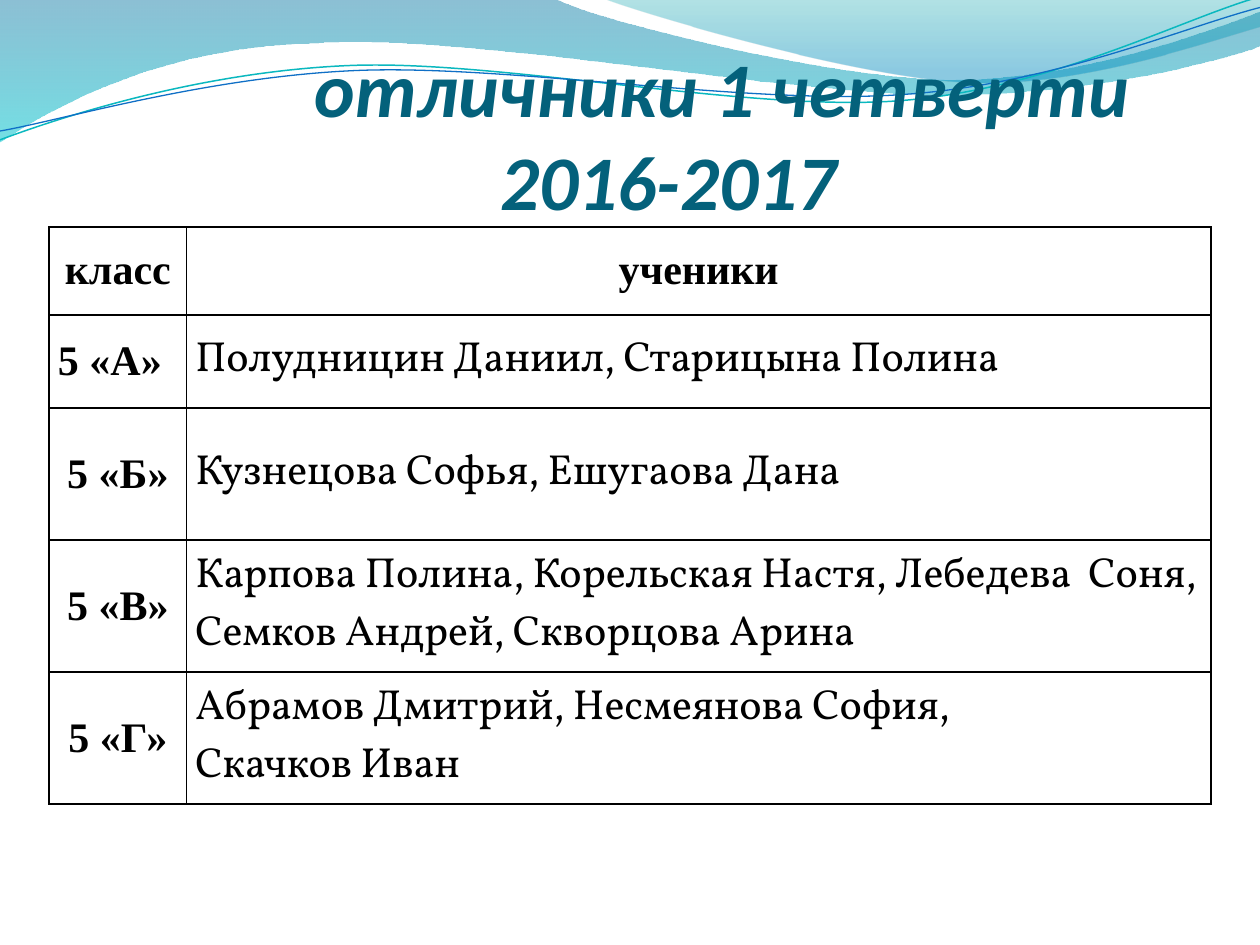
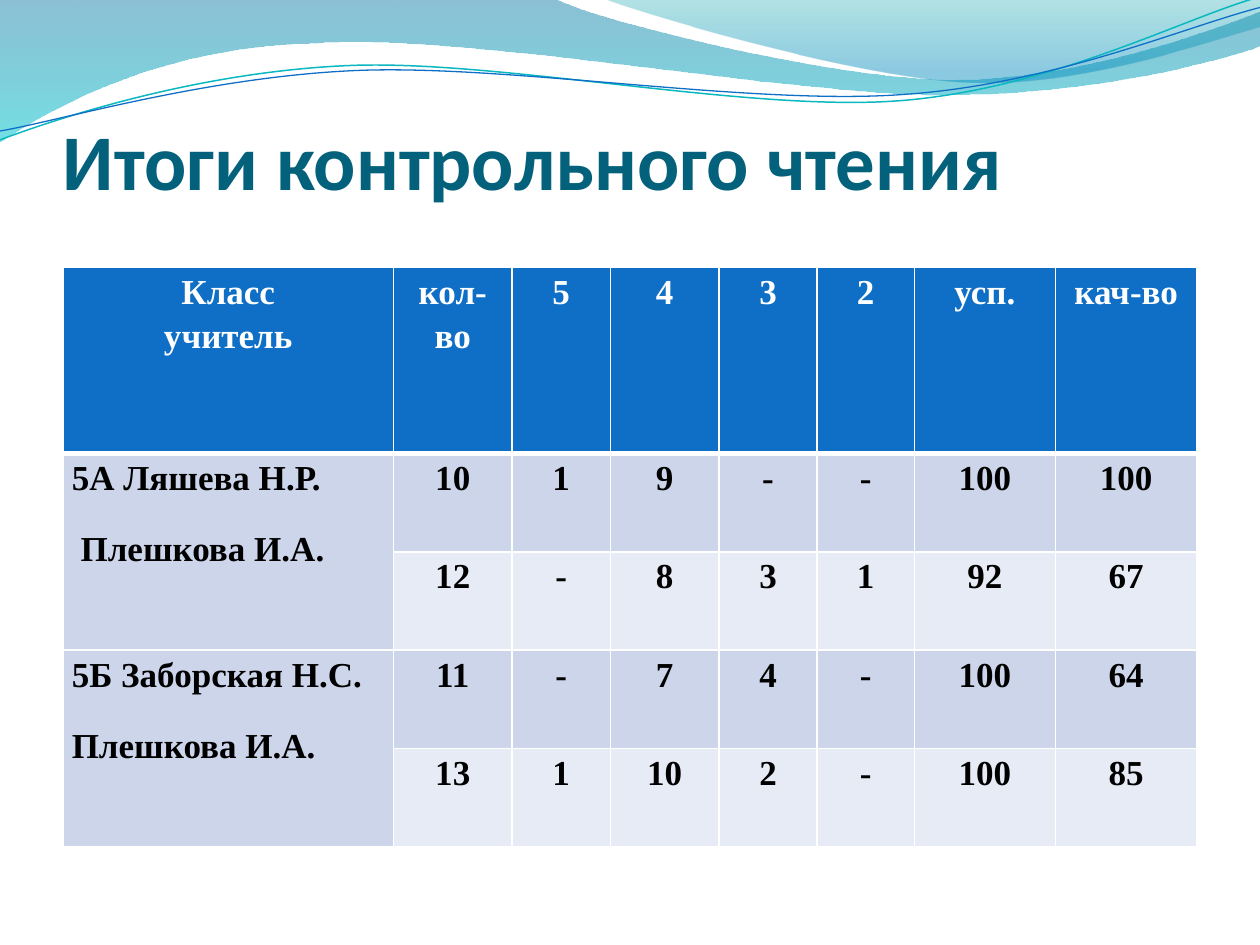
"""Builds two school report slides: top pupils of the term and reading test results."""
from math import cos, radians, sin
from lxml.etree import SubElement
from pptx import Presentation
from pptx.dml.color import RGBColor
from pptx.enum.text import MSO_ANCHOR as Anchor, PP_ALIGN as Align
from pptx.oxml import parse_xml
from pptx.oxml.ns import nsdecls, qn
from pptx.util import Inches, Pt

WIDTH, HEIGHT = 10, 7.5
BLACK, WHITE, TITLE_COLOUR, BLUE = "000000", "FFFFFF", "04617B", "0F6FC6"
BAND_DARK, BAND_LIGHT = "CCD5EA", "E7EBF5"
SERIF, PUPIL_FONT, TITLE_FONT = "Times New Roman", "Vollkorn", "Calibri"
WAVE_TURN = -2.7

# A piece with one point is a line, a piece with three is a Bezier curve.
BANDS = [
    ((0, 0),
     [[(4.4, -0.01)], [(4.76, 0.17), (6.64, 0.63), (7.58, 0.63)],
      [(8.53, 0.63), (9.58, 0.26), (10, 0.09)], [(10.01, 0.36)],
      [(9.83, 0.44), (8.7, 0.76), (7.46, 0.75)],
      [(6.22, 0.75), (3.82, 0.28), (2.57, 0.34)],
      [(1.29, 0.36), (0.46, 0.83), (-0.01, 1.13)], [(0, 0)]],
     [(0, "0074A1", 45), (1, "00C6CF", 55)]),
    ((4.79, -0.01),
     [[(5.09, 0.11), (6.82, 0.62), (7.69, 0.65)],
      [(8.56, 0.69), (9.61, 0.32), (10, 0.21)], [(10, 0)], [(4.79, -0.01)]],
     [(0, "00A1A9", 30), (0.8, "008BBF", 45)]),
]
WAVES = [
    ((0, 1.11),
     [[(0.48, 0.93), (1.58, 0.57), (2.77, 0.52)],
      [(3.95, 0.47), (5.93, 0.89), (7.13, 0.8)],
      [(8.33, 0.71), (9.38, 0.15), (9.98, -0.02)]], (4.99, 0.58), "0AB8BF", 0.85),
    ((0, 1.04),
     [[(0.47, 0.96), (1.64, 0.61), (2.83, 0.56)],
      [(4.03, 0.51), (5.97, 0.84), (7.17, 0.75)],
      [(8.36, 0.67), (9.41, 0.21), (10, 0.06)]], (5, 0.59), BLUE, 0.75),
]

PUPILS_TITLE, PUPILS_TITLE_TABS = "\tотличники 1 четверти\v\t\t2016-2017", (2, 3.47)
PUPILS_HEADER = ["класс", "ученики"]
PUPILS = [
    ("5 «А»", ["Полудницин Даниил, Старицына Полина"]),
    ("5 «Б»", ["Кузнецова Софья, Ешугаова Дана"]),
    ("5 «В»", ["Карпова Полина, Корельская Настя, Лебедева  Соня, "
               "Семков Андрей, Скворцова Арина"]),
    ("5 «Г»", ["Абрамов Дмитрий, Несмеянова София,", "Скачков Иван"]),
]
PUPILS_SIZE = (9.22, 4.58)
PUPILS_COLUMNS, PUPILS_ROWS = [1.09, 8.13], [0.7, 0.74] + [1.05] * 3

RESULTS_TITLE = "Итоги контрольного чтения"
RESULTS_HEADER = [["Класс", "учитель"], "кол-во", "5", "4", "3", "2", "усп.", "кач-во"]
RESULTS = [
    (["5А Ляшева Н.Р.", " Плешкова И.А."],
     [["10", "1", "9", "-", "-", "100", "100"], ["12", "-", "8", "3", "1", "92", "67"]]),
    (["5Б Заборская Н.С.", "Плешкова И.А."],
     [["11", "-", "7", "4", "-", "100", "64"], ["13", "1", "10", "2", "-", "100", "85"]]),
]
RESULTS_SIZE = (9, 4.6)
RESULTS_COLUMNS = [2.62, 0.94, 0.78, 0.86, 0.78, 0.77, 1.12, 1.12]
RESULTS_ROWS = [1.48] + [0.78] * 4


def colour(hex_text):
    return RGBColor.from_string(hex_text)


def turn(point, pivot, degrees):
    angle = radians(degrees)
    dx, dy = point[0] - pivot[0], point[1] - pivot[1]
    return (pivot[0] + dx * cos(angle) - dy * sin(angle),
            pivot[1] + dx * sin(angle) + dy * cos(angle))


def add_outline(slide, start, pieces, close, pivot=(0, 0), rotation=0):
    points = [start] + [point for piece in pieces for point in piece]
    points = [tuple(map(Inches, turn(point, pivot, -rotation))) for point in points]
    builder = slide.shapes.build_freeform(*points[0])
    builder.add_line_segments(points[1:], close=close)
    outline = builder.convert_to_shape()
    outline.shadow.inherit = False
    outline.rotation = rotation
    steps = iter(list(outline._element.spPr.iter(qn("a:lnTo"))))
    for piece in pieces:
        first, *others = [next(steps) for _ in piece]
        if others:
            first.tag = qn("a:cubicBezTo")
            for step in others:
                first.append(step[0])
                step.getparent().remove(step)
    return outline


def add_waves(slide):
    for start, pieces, stops in BANDS:
        band = add_outline(slide, start, pieces, True)
        band.line.fill.background()
        band.fill.gradient()
        band.fill.gradient_angle = 270
        for stop, (position, tint, _) in zip(band.fill.gradient_stops, stops):
            stop.position, stop.color.rgb = position, colour(tint)
        tints = band._element.spPr.iter(qn("a:srgbClr"))
        for tint, (_, _, opacity) in zip(list(tints), stops):
            SubElement(tint, qn("a:alpha"), val=str(opacity * 1000))
    for start, pieces, pivot, tint, weight in WAVES:
        wave = add_outline(slide, start, pieces, False, pivot, WAVE_TURN)
        wave.fill.background()
        wave.line.color.rgb, wave.line.width = colour(tint), Pt(weight)


def style(paragraph, size, font, tint, bold=True, italic=False):
    face = paragraph.font
    face.size, face.name, face.bold, face.italic = Pt(size), font, bold, italic
    face.color.rgb = colour(tint)


def add_title(slide, text, top, height, size, italic=False, tabs=()):
    box = slide.shapes.add_textbox(*map(Inches, (0.5, top, WIDTH - 1, height)))
    frame = box.text_frame
    frame.word_wrap, frame.vertical_anchor = True, Anchor.BOTTOM
    frame.margin_left = frame.margin_right = frame.margin_bottom = 0
    title = frame.paragraphs[0]
    title.text = text
    style(title, size, TITLE_FONT, TITLE_COLOUR, italic=italic)
    if tabs:
        stops = parse_xml(f'<a:tabLst {nsdecls("a")}/>')
        for tab in tabs:
            SubElement(stops, qn("a:tab"), pos=str(Inches(tab)), algn="l")
        title._p.get_or_add_pPr().insert(0, stops)


def add_grid(slide, left, top, size, columns, rows):
    grid = slide.shapes.add_table(len(rows), len(columns),
                                  *map(Inches, (left, top, *size))).table
    grid.first_row = grid.horz_banding = False
    for column, share in zip(grid.columns, columns):
        column.width = Inches(size[0] * share / sum(columns))
    for row, share in zip(grid.rows, rows):
        row.height = Inches(size[1] * share / sum(rows))
    return grid


def fill_cell(cell, lines, size, font, tint, border, bold=True, align=Align.CENTER,
              fill=None, anchor=Anchor.TOP, spacing=None, gap=0, top=1, bottom=1):
    cell.margin_left = cell.margin_right = Inches(0.07)
    cell.margin_top = cell.margin_bottom = 0
    cell.vertical_anchor = anchor
    cell.text = "\n".join([lines] if isinstance(lines, str) else lines)
    for number, paragraph in enumerate(cell.text_frame.paragraphs):
        style(paragraph, size, font, tint, bold)
        paragraph.alignment = align
        if spacing:
            paragraph.line_spacing = spacing
        if number and gap:
            paragraph.space_before = Pt(gap)
    if fill:
        cell.fill.solid()
        cell.fill.fore_color.rgb = colour(fill)
    else:
        cell.fill.background()
    properties = cell._tc.get_or_add_tcPr()
    for place, (side, weight) in enumerate(zip("LRTB", (1, 1, top, bottom))):
        properties.insert(place, parse_xml(
            f'<a:ln{side} {nsdecls("a")} w="{Pt(weight)}"><a:solidFill>'
            f'<a:srgbClr val="{border}"/></a:solidFill></a:ln{side}>'))


def build_pupils(slide):
    grid = add_grid(slide, 0.39, 1.8, PUPILS_SIZE, PUPILS_COLUMNS, PUPILS_ROWS)
    look = dict(size=24, tint=BLACK, border=BLACK, anchor=Anchor.MIDDLE)
    for column, heading in enumerate(PUPILS_HEADER):
        fill_cell(grid.cell(0, column), heading, font=SERIF, **look)
    for row, (form, names) in enumerate(PUPILS, 1):
        fill_cell(grid.cell(row, 0), form, font=SERIF,
                  align=Align.LEFT if row == 1 else Align.CENTER, **look)
        fill_cell(grid.cell(row, 1), names, font=PUPIL_FONT, bold=False,
                  align=Align.LEFT, **look)
    add_title(slide, PUPILS_TITLE, 0.44, 1.35, 44.1, True, PUPILS_TITLE_TABS)


def build_results(slide):
    add_title(slide, RESULTS_TITLE, 0.77, 0.87, 45)
    grid = add_grid(slide, 0.5, 2.12, RESULTS_SIZE, RESULTS_COLUMNS, RESULTS_ROWS)
    look = dict(size=20, font=SERIF, border=WHITE, spacing=1.15)
    for column, heading in enumerate(RESULTS_HEADER):
        fill_cell(grid.cell(0, column), heading, tint=WHITE, fill=BLUE, bottom=3, **look)
    for group, (teachers, scores) in enumerate(RESULTS):
        first = 1 + 2 * group
        top = 3 if first == 1 else 1
        grid.cell(first, 0).merge(grid.cell(first + 1, 0))
        fill_cell(grid.cell(first, 0), teachers, tint=BLACK, fill=BAND_DARK,
                  align=Align.LEFT, gap=15, top=top, **look)
        for offset, (marks, band) in enumerate(zip(scores, (BAND_DARK, BAND_LIGHT))):
            for column, mark in enumerate(marks, 1):
                fill_cell(grid.cell(first + offset, column), mark, tint=BLACK, fill=band,
                          top=1 if offset else top, **look)


def main():
    deck = Presentation()
    deck.slide_width, deck.slide_height = Inches(WIDTH), Inches(HEIGHT)
    for build in (build_pupils, build_results):
        slide = deck.slides.add_slide(deck.slide_layouts[6])
        add_waves(slide)
        build(slide)
    deck.save("out.pptx")


if __name__ == "__main__":
    main()
